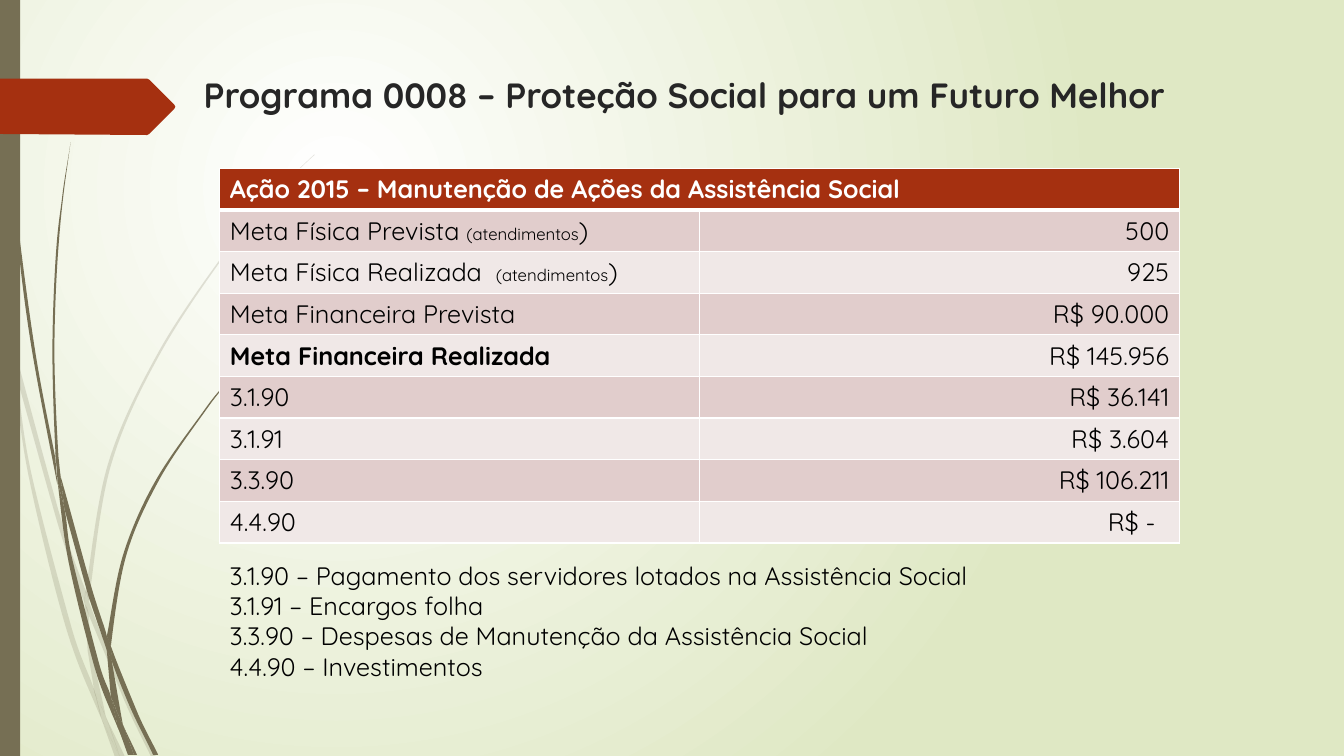
from lxml import etree
from pptx import Presentation
from pptx.dml.color import RGBColor
from pptx.enum.shapes import MSO_SHAPE
from pptx.enum.text import PP_ALIGN
from pptx.oxml.ns import qn
from pptx.util import Cm, Pt

RECTANGLE = MSO_SHAPE.RECTANGLE
LEFT, RIGHT = PP_ALIGN.LEFT, PP_ALIGN.RIGHT
WHITE = RGBColor(0xFF, 0xFF, 0xFF)
BLACK = RGBColor(0x00, 0x00, 0x00)
CHARCOAL = RGBColor(0x26, 0x26, 0x26)
PALE_GREEN = RGBColor(0xDF, 0xE8, 0xC4)
OLIVE = RGBColor(0x76, 0x6F, 0x54)
RUST = RGBColor(0xA5, 0x30, 0x10)
BANDS = [RGBColor(0xF0, 0xE8, 0xE7), RGBColor(0xE1, 0xCD, 0xCC)]
OUTLINE_UNIT = Cm(2.54) / 100

PALE_BLADES = [
    ([(0, 282), (9, 322), (11, 350)], [(10, 344), (0, 299)]),
    ([(14, 345), (62, 520), (85, 586)], [(84, 599), (58, 522), (17, 376)]),
    ([(88, 596), (92, 607), (127, 692), (155, 751)], [(150, 751), (123, 694), (88, 610)]),
    ([(105, 711), (124, 751)], [(119, 751)]),
    ([(11, 350), (17, 376), (31, 469), (70, 619), (93, 683), (101, 714)],
     [(92, 693), (65, 621), (28, 470), (11, 350)]),
    ([(84, 599), (88, 610), (91, 646), (105, 711)], [(96, 692), (93, 683), (87, 646)]),
    ([(88, 596), (110, 462), (160, 349), (229, 245), (268, 198), (290, 175), (312, 154)],
     [(312, 153), (289, 175), (268, 197), (228, 244), (158, 348), (107, 461), (85, 586)]),
    ([(101, 714), (114, 751)], [(119, 751)]),
    ([(84, 599), (85, 586), (88, 596)], [(88, 610)]),
    ([(93, 683), (96, 692), (105, 711), (119, 751)], [(101, 714), (99, 707)]),
]
DARK_BLADES = [
    ([(3, 0), (4, 48), (7, 110), (17, 233), (33, 355), (57, 481)],
     [(55, 455), (36, 355), (19, 232), (8, 109), (5, 48), (4, 0)]),
    ([(60, 472), (93, 590), (106, 631), (106, 645)], [(88, 592), (64, 505)]),
    ([(110, 641), (113, 649), (136, 706), (157, 749)], [(152, 749), (132, 708), (111, 656)]),
    ([(57, 477), (64, 505), (72, 556), (98, 657), (110, 691), (117, 722)],
     [(111, 708), (93, 659), (68, 557), (57, 477)]),
    ([(70, 141), (62, 193), (56, 245), (52, 349), (55, 449), (60, 472)],
     [(58, 453), (54, 349), (58, 245), (63, 193), (70, 141)]),
    ([(122, 719), (136, 749)], [(133, 749)]),
    ([(57, 477), (55, 449), (60, 472)], [(64, 505)]),
    ([(110, 641), (125, 552), (158, 476), (205, 406), (231, 374), (245, 359), (261, 344)],
     [(260, 344), (245, 358), (231, 373), (204, 405), (156, 474), (122, 551), (106, 631)]),
    ([(117, 722), (127, 749)], [(131, 749)]),
    ([(106, 645), (109, 651), (111, 656), (122, 719)], [(116, 706), (110, 691)]),
    ([(106, 631), (110, 641), (111, 656)], [(109, 651), (106, 645)]),
    ([(110, 691), (116, 706), (122, 719), (133, 749)], [(130, 749), (117, 722), (116, 717)]),
]
ARROW = [(0, 78), (146, 78), (148, 79), (173, 104), (174, 106),
         (173, 108), (148, 133), (146, 134), (0, 133)]

HEADER = "Ação 2015 – Manutenção de Ações da Assistência Social"
UNIT_NOTE = [("(atendimentos", 12), (")", 18)]
ROWS = [
    ([("Meta Física Prevista ", 18)] + UNIT_NOTE, "500"),
    ([("Meta Física Realizada  ", 18)] + UNIT_NOTE, "925"),
    ([("Meta Financeira Prevista", 18)], "R$ 90.000"),
    ([("Meta Financeira Realizada", 18)], "R$ 145.956"),
    ([("3.1.90", 18)], "R$ 36.141"),
    ([("3.1.91", 18)], "R$ 3.604"),
    ([("3.3.90", 18)], "R$ 106.211"),
    ([("4.4.90", 18)], "R$ -"),
]
BOLD_ROW = 4
NOTES = [
    "3.1.90 – Pagamento dos servidores lotados na Assistência Social",
    "3.1.91 – Encargos folha",
    "3.3.90 – Despesas de Manutenção da Assistência Social",
    "4.4.90 – Investimentos",
]


def draw_outline(points, color):
    builder = shapes.build_freeform(*points[0], scale=OUTLINE_UNIT)
    builder.add_line_segments(points[1:], close=True)
    shape = builder.convert_to_shape()
    shape.shadow.inherit = False
    shape.fill.solid()
    shape.fill.fore_color.rgb = color
    shape.line.fill.background()
    return shape


def write(paragraph, pieces, color, bold=False, align=LEFT):
    paragraph.alignment = align
    for text, size in pieces:
        run = paragraph.add_run()
        run.text = text
        font_format = {"name": "Quicksand", "size": Pt(size), "bold": bold}
        for name, value in font_format.items():
            setattr(run.font, name, value)
        run.font.color.rgb = color


presentation = Presentation()
presentation.slide_width, presentation.slide_height = Cm(33.87), Cm(19.05)
slide = presentation.slides.add_slide(presentation.slide_layouts[6])
shapes = slide.shapes

background = slide.background.fill
background.gradient()
for stop, position, color in zip(background.gradient_stops, (0, 1), (WHITE, PALE_GREEN)):
    stop.position = position
    stop.color.rgb = color
linear = next(slide.background._cSld.iter(qn("a:lin")))
radial = etree.Element(qn("a:path"), {"path": "circle"})
etree.SubElement(radial, qn("a:fillToRect"),
                 {"l": "50000", "t": "50000", "r": "100000", "b": "100000"})
linear.getparent().replace(linear, radial)

for blades, opacity in ((PALE_BLADES, 20), (DARK_BLADES, 100)):
    for there, back in blades:
        shape = draw_outline(there + back, OLIVE)
        if opacity < 100:
            tint = next(shape._element.spPr.iter(qn("a:srgbClr")))
            etree.SubElement(tint, qn("a:alpha"), {"val": str(opacity * 1000)})
        nodes = list(shape._element.spPr.iter(qn("a:pt")))
        for edge in (nodes[:len(there)], nodes[len(there):]):
            spots = [(int(node.get("x")), int(node.get("y"))) for node in edge]
            padded = [spots[0], *spots, spots[-1]]
            for node, a, b, c, d in zip(edge[1:], padded, padded[1:], padded[2:], padded[3:]):
                segment = node.getparent()
                segment.tag = qn("a:cubicBezTo")
                controls = [[q + (r - p) / 6 for p, q, r in zip(a, b, c)],
                            [r - (s - q) / 6 for q, r, s in zip(b, c, d)]]
                for index, (x, y) in enumerate(controls):
                    segment.insert(index, etree.Element(
                        qn("a:pt"), {"x": str(round(x)), "y": str(round(y))}))

side_bar = shapes.add_shape(RECTANGLE, 0, 0, Cm(0.51), presentation.slide_height)
side_bar.shadow.inherit = False
side_bar.fill.solid()
side_bar.fill.fore_color.rgb = OLIVE
side_bar.line.fill.background()
draw_outline(ARROW, RUST)

title = shapes.add_textbox(Cm(4.88), Cm(1.73), Cm(27.08), Cm(2.11)).text_frame
title.word_wrap = True
write(title.paragraphs[0], [("Programa 0008 – Proteção Social para um Futuro Melhor", 25)],
      CHARCOAL, bold=True)

table = shapes.add_table(len(ROWS) + 1, 2, Cm(5.54), Cm(4.24), Cm(24.18), Cm(9.45)).table
table.cell(0, 0).merge(table.cell(0, 1))
write(table.cell(0, 0).text_frame.paragraphs[0], [(HEADER, 18)], WHITE, bold=True)
for index, (label, amount) in enumerate(ROWS, 1):
    write(table.cell(index, 0).text_frame.paragraphs[0], label, BLACK, bold=index == BOLD_ROW)
    write(table.cell(index, 1).text_frame.paragraphs[0], [(amount, 18)], BLACK, align=RIGHT)
table.cell(len(ROWS), 1).margin_right = Cm(0.6)

for index, row in enumerate(table.rows):
    for cell in row.cells:
        properties = cell._tc.get_or_add_tcPr()
        for side in ("lnL", "lnR", "lnT", "lnB"):
            thick = (index, side) in ((0, "lnB"), (1, "lnT"))
            border = etree.SubElement(properties, qn("a:" + side),
                                      {"w": str(Pt(3 if thick else 1))})
            border_fill = etree.SubElement(border, qn("a:solidFill"))
            etree.SubElement(border_fill, qn("a:srgbClr"), {"val": str(WHITE)})
        cell.fill.solid()
        cell.fill.fore_color.rgb = BANDS[index % 2] if index else RUST

notes = shapes.add_textbox(Cm(5.54), Cm(13.99), Cm(24.28), Cm(3.33)).text_frame
notes.word_wrap = True
for index, note in enumerate(NOTES):
    paragraph = notes.add_paragraph() if index else notes.paragraphs[0]
    write(paragraph, [(note, 18)], BLACK)

presentation.save("out.pptx")
